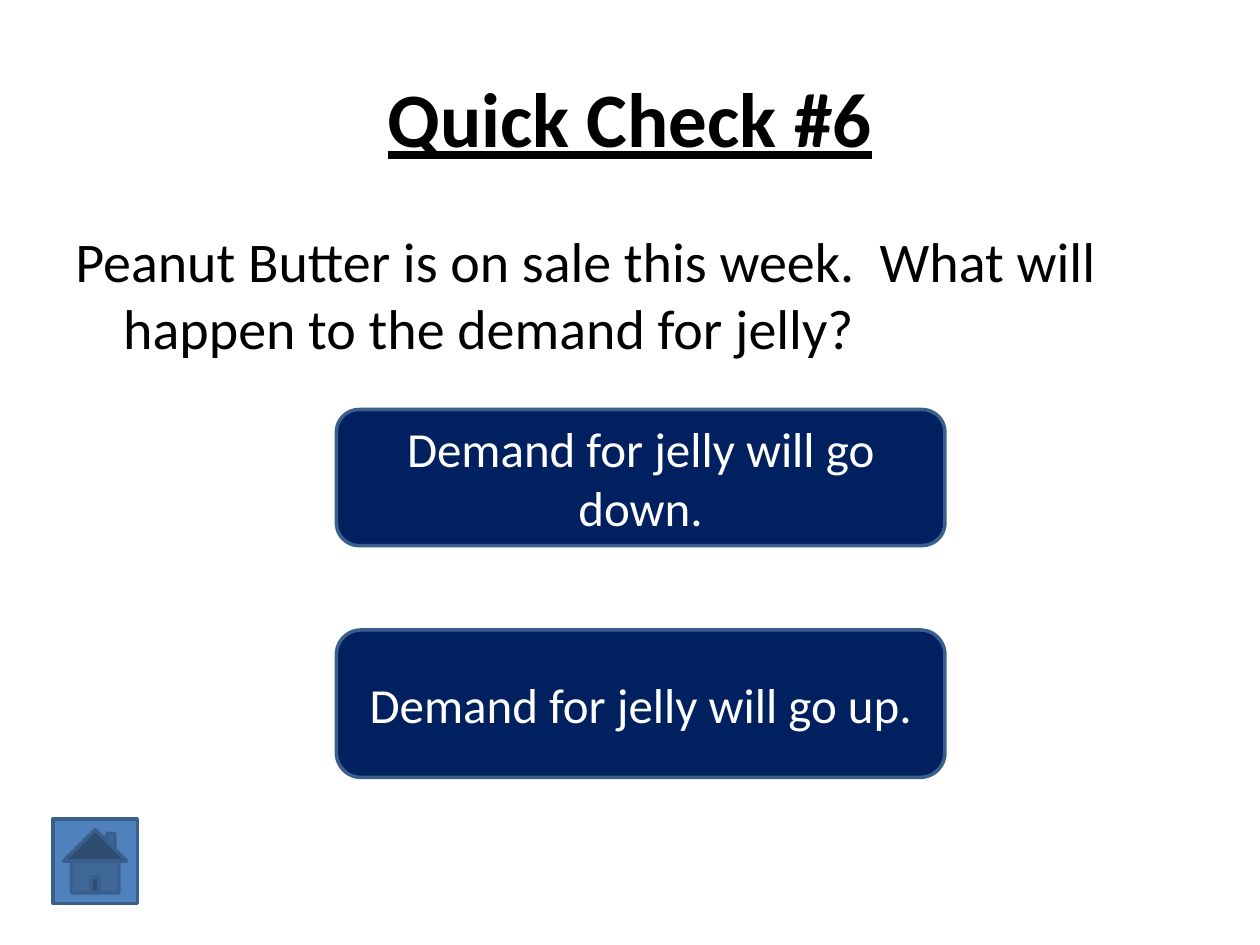
from pptx import Presentation
from pptx.dml.color import RGBColor
from pptx.enum.shapes import MSO_SHAPE
from pptx.enum.text import MSO_ANCHOR, PP_ALIGN
from pptx.util import Inches, Pt

COLORS = {"text": "000000", "answer": "002060", "answer_text": "FFFFFF",
          "home": "4F81BD", "outline": "3A5F8C"}
TITLE_FORMAT = {"name": "Calibri", "size": Pt(44), "bold": True, "underline": True}
QUESTION_FORMAT = {"name": "Calibri", "size": Pt(32)}
ANSWER_FORMAT = {"name": "Calibri", "size": Pt(28)}


def color(name):
    """Return the named colour."""
    return RGBColor.from_string(COLORS[name])


def place(shape, box):
    """Move a shape to a box of left, top, width and height in inches."""
    for name, length in zip(("left", "top", "width", "height"), box):
        setattr(shape, name, Inches(length))


def write(shape, text, font_format, color_name, alignment, anchor):
    """Write one formatted paragraph into a shape and return it."""
    frame = shape.text_frame
    frame.word_wrap = True
    frame.vertical_anchor = anchor
    paragraph = frame.paragraphs[0]
    paragraph.alignment = alignment
    run = paragraph.add_run()
    run.text = text
    for name, value in font_format.items():
        setattr(run.font, name, value)
    run.font.color.rgb = color(color_name)
    return paragraph


def add_title(slide, box, text):
    """Fill the title placeholder."""
    title = slide.shapes.title
    place(title, box)
    write(title, text, TITLE_FORMAT, "text", PP_ALIGN.CENTER, MSO_ANCHOR.MIDDLE)


def add_question(slide, box, text):
    """Add the question with a hanging indent."""
    question = slide.shapes.add_textbox(*map(Inches, box))
    paragraph = write(question, text, QUESTION_FORMAT, "text",
                      PP_ALIGN.LEFT, MSO_ANCHOR.TOP)
    properties = paragraph._p.get_or_add_pPr()
    properties.set("marL", str(Inches(0.38)))
    properties.set("indent", str(Inches(-0.38)))


def add_button(slide, box, preset, fill):
    """Add an outlined button shape and return it."""
    button = slide.shapes.add_shape(preset, *map(Inches, box))
    button.shadow.inherit = False
    button.fill.solid()
    button.fill.fore_color.rgb = color(fill)
    button.line.color.rgb = color("outline")
    button.line.width = Pt(2)
    return button


def add_answer(slide, box, text):
    """Add a rounded answer button with centred text."""
    button = add_button(slide, box, MSO_SHAPE.ROUNDED_RECTANGLE, "answer")
    write(button, text, ANSWER_FORMAT, "answer_text",
          PP_ALIGN.CENTER, MSO_ANCHOR.MIDDLE)


def main():
    """Build and save the quick check slide."""
    presentation = Presentation()
    presentation.slide_width = Inches(10)
    presentation.slide_height = Inches(7.5)
    slide = presentation.slides.add_slide(presentation.slide_layouts[5])
    add_title(slide, (0.5, 0.3, 9, 1.25), "Quick Check #6")
    add_question(slide, (0.5, 1.75, 9, 4.95),
                 "Peanut Butter is on sale this week.  "
                 "What will happen to the demand for jelly?")
    for top, height, direction in ((3.25, 1.08, "down"), (5, 1.17, "up")):
        add_answer(slide, (2.67, top, 4.83, height),
                   f"Demand for jelly will go {direction}.")
    add_button(slide, (0.42, 6.5, 0.67, 0.67), MSO_SHAPE.ACTION_BUTTON_HOME, "home")
    presentation.save("out.pptx")


if __name__ == "__main__":
    main()
